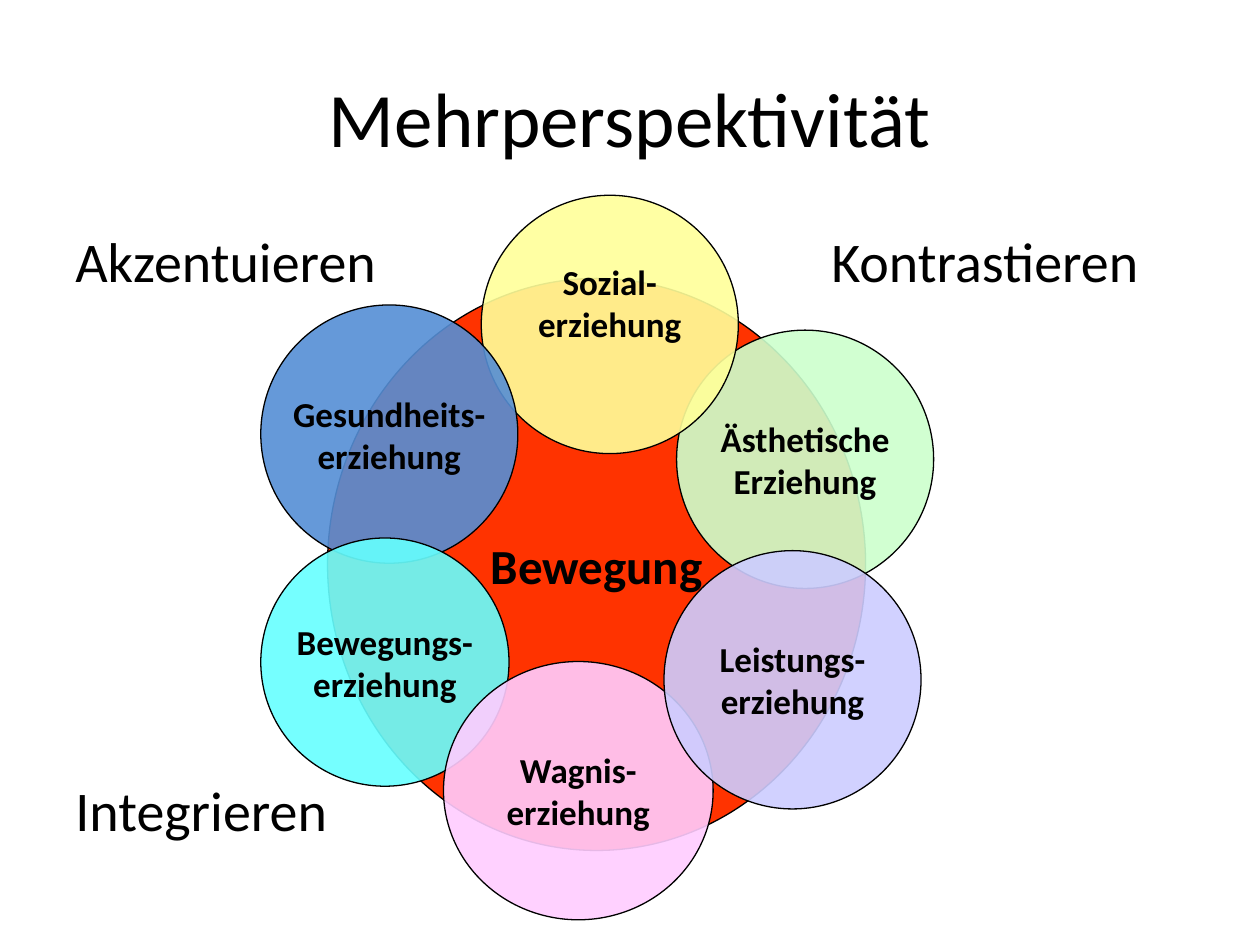
from dataclasses import dataclass

from lxml.etree import SubElement
from pptx import Presentation
from pptx.dml.color import RGBColor
from pptx.enum.shapes import MSO_SHAPE as Shape
from pptx.enum.text import MSO_ANCHOR as Anchor, PP_ALIGN as Align
from pptx.oxml.ns import qn
from pptx.util import Inches, Pt


@dataclass(frozen=True)
class Theme:
    font: str = "Calibri"
    ink: str = "000000"
    core: str = "FF3300"
    title_size: int = 44
    method_size: int = 32
    core_size: int = 28
    petal_size: int = 20
    outline: float = 0.75
    petal_opacity: int = 90


THEME = Theme()

PETALS = [
    (("Ästhetische", "Erziehung"), "CCFFCC", (5.37, 2.62, 2.04, 2.05), 0),
    (("Sozial-", "erziehung"), "FFFF99", (3.82, 1.55, 2.04, 2.05), 0.34),
    (("Gesundheits-", "erziehung"), "558ED5", (2.07, 2.42, 2.04, 2.05), 0),
    (("Bewegungs-", "erziehung"), "66FFFF", (2.07, 4.27, 1.97, 1.97), 0),
    (("Wagnis-", "erziehung"), "FFCCFF", (3.52, 5.25, 2.14, 2.05), 0),
    (("Leistungs-", "erziehung"), "CCCCFF", (5.27, 4.37, 2.04, 2.05), 0),
]

METHODS = [
    ("Akzentuieren", 0, 0),
    ("Kontrastieren", 6, 0),
    ("Integrieren", 0, 4.36),
]


def inches(box):
    return [Inches(length) for length in box]


def write(frame, lines, size, bold=False, align=Align.CENTER):
    frame.text = "\n".join(lines)
    for paragraph in frame.paragraphs:
        paragraph.alignment = align
        font = paragraph.font
        font.name, font.size, font.bold = THEME.font, Pt(size), bold
        font.color.rgb = RGBColor.from_string(THEME.ink)


def add_circle(group, box, lines, color, size, opacity=100, lift=0):
    circle = group.shapes.add_shape(Shape.OVAL, *inches(box))
    circle.shadow.inherit = False
    circle.fill.solid()
    circle.fill.fore_color.rgb = RGBColor.from_string(color)
    if opacity < 100:
        tint = circle.fill._xPr.find(qn("a:solidFill"))[0]
        SubElement(tint, qn("a:alpha"), val=str(opacity * 1000))
    circle.line.color.rgb = RGBColor.from_string(THEME.ink)
    circle.line.width = Pt(THEME.outline)
    frame = circle.text_frame
    frame.word_wrap = False
    frame.vertical_anchor = Anchor.MIDDLE
    frame.margin_bottom = Inches(0.05 + lift)
    write(frame, lines, size, bold=True)


def add_flower(slide, core_box):
    flower = slide.shapes.add_group_shape()
    add_circle(flower, core_box, ["Bewegung"], THEME.core, THEME.core_size)
    for lines, color, box, lift in PETALS:
        add_circle(flower, box, lines, color, THEME.petal_size,
                   THEME.petal_opacity, lift)


def add_title(slide, box):
    frame = slide.shapes.add_textbox(*inches(box)).text_frame
    frame.word_wrap = True
    frame.vertical_anchor = Anchor.MIDDLE
    write(frame, ["Mehrperspektivität"], THEME.title_size)


def add_methods(slide, box):
    left, top, width, height = box
    for method, across, down in METHODS:
        label_box = (left + across, top + down, width, height)
        frame = slide.shapes.add_textbox(*inches(label_box)).text_frame
        frame.word_wrap = True
        write(frame, [method], THEME.method_size, align=Align.LEFT)


def main():
    deck = Presentation()
    deck.slide_width, deck.slide_height = Inches(10), Inches(7.5)
    slide = deck.slides.add_slide(deck.slide_layouts[6])
    add_flower(slide, (2.6, 2.21, 4.27, 4.54))
    add_title(slide, (0.5, 0.3, 9, 1.25))
    add_methods(slide, (0.5, 1.75, 3, 0.64))
    deck.save("out.pptx")


if __name__ == "__main__":
    main()
